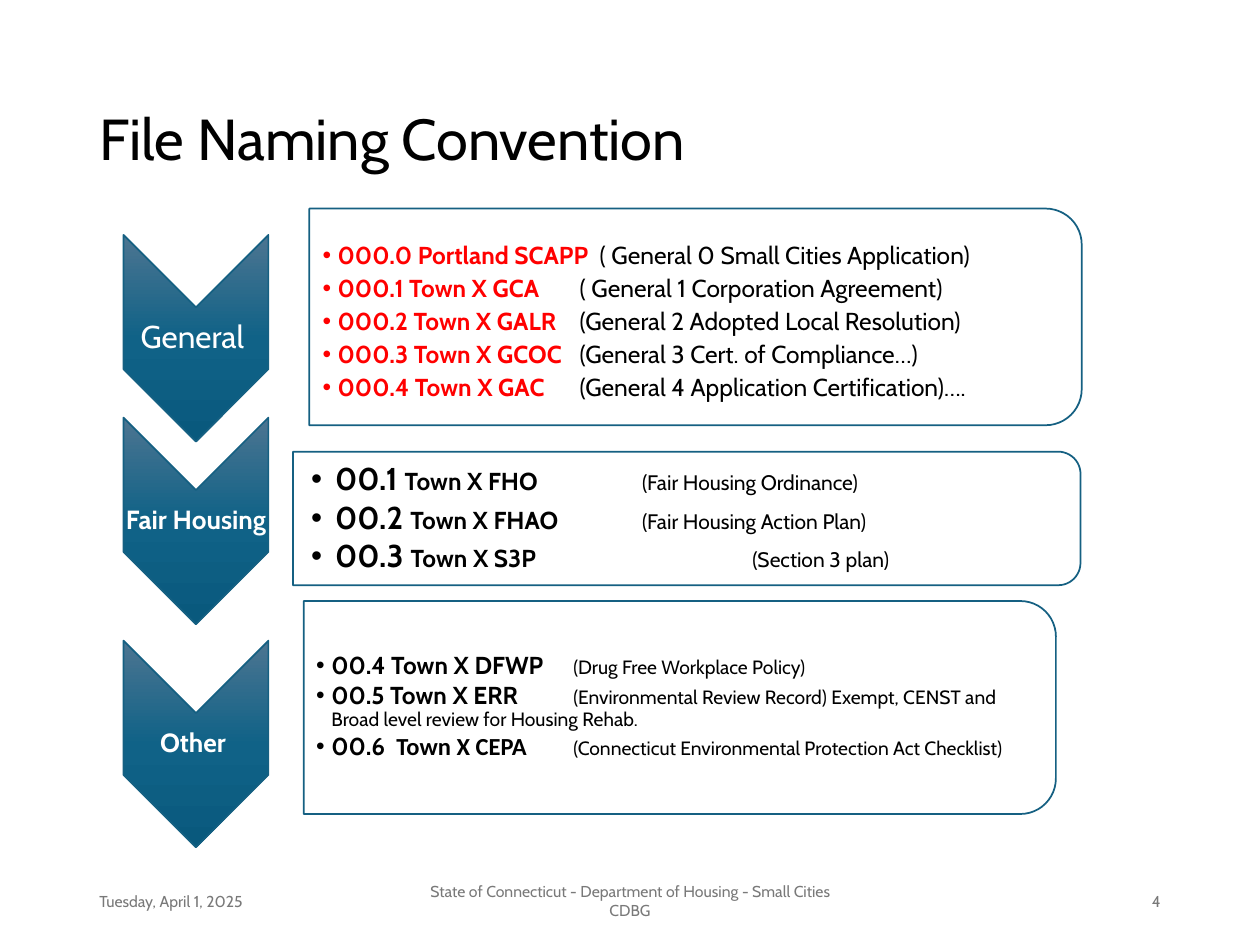
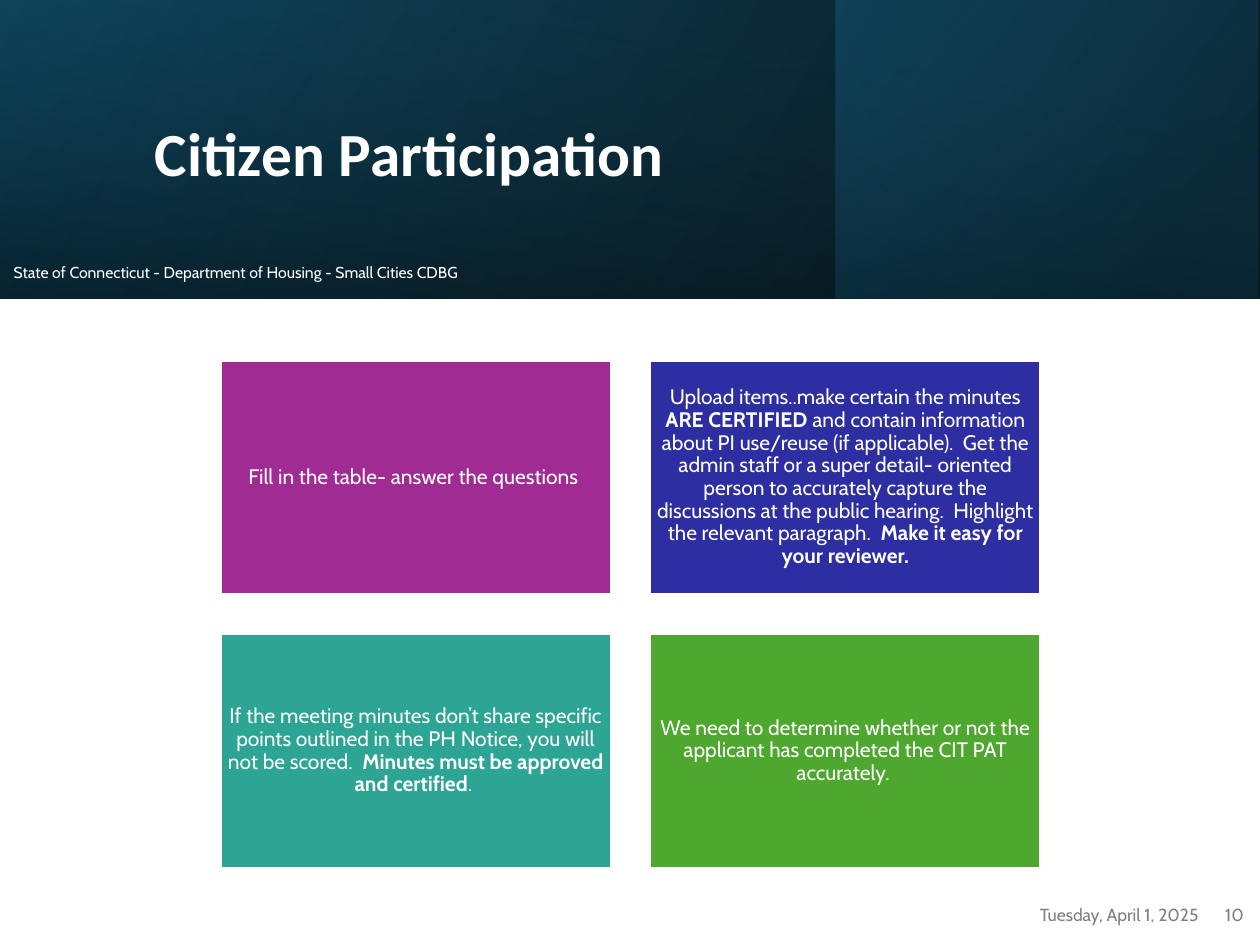
from lxml.etree import SubElement
from pptx import Presentation
from pptx.dml.color import RGBColor
from pptx.enum.shapes import MSO_SHAPE
from pptx.enum.text import MSO_ANCHOR, PP_ALIGN
from pptx.oxml import parse_xml
from pptx.oxml.ns import nsdecls, qn
from pptx.util import Inches, Pt

COLUMNS, ROWS = 100, 75
CELL = 0.1
BODY_FONT, HEADING_FONT = "Cabin", "Calibri"
BLACK, WHITE, RED = "000000", "FFFFFF", "FF0000"
TEAL, NAVY, DEEP_TEAL = "156082", "104862", "0B3041"
FOOTER_GRAY, DATE_GRAY = "797979", "808080"
CHEVRON_STOPS = [(0, "4C7591", 100), (50, "106287", 100), (100, "09597D", 100)]
DATE = "Tuesday, April 1, 2025"
AGENCY = "State of Connecticut - Department of Housing - Small Cities CDBG"
MARGINS = ("margin_left", "margin_top", "margin_right", "margin_bottom")
FRAME_INSETS = (1, 0.5, 1, 0.5)
LABEL_INSETS = (0.1,) * 4
TILE_INSETS = (0.5,) * 4
TIGHT = {"line_spacing": 0.9}
CENTERED = {"alignment": PP_ALIGN.CENTER, "line_spacing": 0.9}


def cells(count):
    return Inches(count * CELL)


def color(hex_value):
    return RGBColor.from_string(hex_value)


def apply_format(target, values):
    for name, value in values.items():
        setattr(target, name, value)


def run_style(size, tint=BLACK, bold=False, font=BODY_FONT):
    return {"size": Pt(size), "bold": bold, "name": font}, tint


def write_paragraph(paragraph, runs, paragraph_format):
    apply_format(paragraph, paragraph_format)
    for words, (font_format, tint) in runs:
        run = paragraph.add_run()
        run.text = words
        apply_format(run.font, font_format)
        run.font.color.rgb = color(tint)


def prepare_frame(frame, insets):
    margins = dict(zip(MARGINS, map(cells, insets)))
    apply_format(frame, {"word_wrap": True,
                         "vertical_anchor": MSO_ANCHOR.MIDDLE, **margins})
    return frame


def add_text(slide, box, paragraphs, paragraph_format, insets=FRAME_INSETS):
    holder = slide.shapes.add_textbox(*map(cells, box))
    frame = prepare_frame(holder.text_frame, insets)
    for index, runs in enumerate(paragraphs):
        paragraph = frame.add_paragraph() if index else frame.paragraphs[0]
        write_paragraph(paragraph, runs, paragraph_format)
    return frame


def add_line_of_text(slide, box, words, style, paragraph_format,
                     insets=FRAME_INSETS):
    add_text(slide, box, [[(words, style)]], paragraph_format, insets)


def add_block(slide, preset, box, fill=None, line=None, width=1, turn=0):
    left, top, across, down = box
    if turn:
        left, top = left + (across - down) / 2, top + (down - across) / 2
        across, down = down, across
    block = slide.shapes.add_shape(
        preset, *map(cells, (left, top, across, down)))
    block.shadow.inherit = False
    block.rotation = turn
    if fill:
        block.fill.solid()
        block.fill.fore_color.rgb = color(fill)
    if line:
        block.line.color.rgb = color(line)
        block.line.width = Pt(width)
    else:
        block.line.fill.background()
    return block


def fill_gradient(block, stops, angle):
    marks = "".join(
        f'<a:gs pos="{position * 1000}"><a:srgbClr val="{tint}">'
        f'<a:alpha val="{opacity * 1000}"/></a:srgbClr></a:gs>'
        for position, tint, opacity in stops)
    gradient = parse_xml(
        f'<a:gradFill {nsdecls("a")} rotWithShape="1"><a:gsLst>{marks}</a:gsLst>'
        f'<a:lin ang="{angle * 60000}" scaled="0"/></a:gradFill>')
    block._element.spPr.find(qn("a:prstGeom")).addnext(gradient)


def add_category(slide, top, words, size, bold):
    box = (9.8, top, 11.5, 16.4)
    chevron = add_block(slide, MSO_SHAPE.CHEVRON, box, line=TEAL, turn=90)
    fill_gradient(chevron, CHEVRON_STOPS, 0)
    add_line_of_text(slide, box, words, run_style(size, WHITE, bold),
                     CENTERED, LABEL_INSETS)


def add_bullets(frame, indent, tab_width):
    for paragraph in frame.paragraphs:
        properties = paragraph._p.get_or_add_pPr()
        attributes = {"marL": cells(indent), "indent": -cells(indent),
                      "defTabSz": cells(tab_width)}
        for name, value in attributes.items():
            properties.set(name, str(value))
        SubElement(properties, qn("a:buFont")).set("typeface", "Arial")
        SubElement(properties, qn("a:buChar")).set("char", "•")


def add_file_list(slide, panel, text_box, files, spacing, left_inset, indent,
                  tab_width):
    add_block(slide, MSO_SHAPE.ROUND_2_SAME_RECTANGLE, panel, WHITE, TEAL,
              turn=90)
    frame = add_text(slide, text_box, files, spacing,
                     (left_inset, 0.1, 0.1, 0.1))
    add_bullets(frame, indent, tab_width)


def add_band(slide, box, stops, angle, turn=0):
    band = add_block(slide, MSO_SHAPE.RECTANGLE, box, turn=turn)
    fill_gradient(band, stops, angle)
    band._element.spPr.find(qn("a:xfrm")).set("flipH", "1")


def add_tile(slide, box, fill, runs):
    tile = add_block(slide, MSO_SHAPE.RECTANGLE, box, fill, WHITE, 1.5)
    frame = prepare_frame(tile.text_frame, TILE_INSETS)
    styled = [(words, run_style(12, WHITE, bold)) for words, bold in runs]
    write_paragraph(frame.paragraphs[0], styled, CENTERED)


def build_file_naming(slide):
    add_line_of_text(slide, (6.9, 4, 86.2, 14.5), "File Naming Convention",
                     run_style(33), TIGHT)
    for category in ((18.65, "General ", 18, False),
                     (33.15, "Fair Housing", 15, True),
                     (50.85, "Other ", 15, True)):
        add_category(slide, *category)

    general = [
        ("000.0 Portland SCAPP  ", "( General 0 Small Cities Application)"),
        ("000.1 Town X GCA  \t", "( General 1 Corporation Agreement)"),
        ("000.2 Town X GALR \t", "(General 2 Adopted Local Resolution)"),
        ("000.3 Town X GCOC \t", "(General 3 Cert. of Compliance…)"),
        ("000.4 Town X GAC \t", "(General 4 Application Certification)…."),
    ]
    fair_housing = [
        ("00.1 ", "Town X FHO ", "\t", "(Fair Housing Ordinance)"),
        ("00.2 ", "Town X FHAO ", "\t", "(Fair Housing Action Plan)"),
        ("00.3 ", "Town X S3P ", "\t\t", "(Section 3 plan)"),
    ]
    other = [
        ("00.4 ", "Town X DFWP \t", BODY_FONT, "(Drug Free Workplace Policy)"),
        ("00.5 ", "Town X ERR \t", BODY_FONT,
         "(Environmental Review Record) Exempt, CENST and "
         "\t\t\tBroad level review for Housing Rehab. "),
        ("00.6  ", "Town X CEPA \t", HEADING_FONT,
         "(Connecticut Environmental Protection Act Checklist)"),
    ]
    add_file_list(
        slide, (24.55, 16.55, 61.3, 17.2), (24.5, 17.7, 60.5, 15.5),
        [[(code, run_style(14, RED, True)), (meaning, run_style(14))]
         for code, meaning in general],
        {"space_before": Pt(2)}, 1.1, 1.2, 6.8)
    add_file_list(
        slide, (23.25, 35.85, 62.5, 10.6), (23.3, 36.4, 62, 9.6),
        [[(number, run_style(18, bold=True)), (code, run_style(14, bold=True)),
          (gap, run_style(18)), (meaning, run_style(12))]
         for number, code, gap, meaning in fair_housing],
        {**TIGHT, "space_after": Pt(2.5)}, 1.4, 1.9, 8.75)
    add_file_list(
        slide, (24.1, 47.7, 59.7, 16.9), (24, 48.5, 58.9, 15.2),
        [[(number, run_style(14, bold=True)),
          (code, run_style(14, bold=True, font=font)),
          (meaning, run_style(11))]
         for number, code, font, meaning in other],
        {**TIGHT, "space_after": Pt(2)}, 1.1, 1.2, 6.8)

    for left, width, words, alignment in (
            (6.9, 22.5, DATE, PP_ALIGN.LEFT),
            (33.1, 33.8, AGENCY, PP_ALIGN.CENTER),
            (70.6, 22.5, "4", PP_ALIGN.RIGHT)):
        add_line_of_text(slide, (left, 69.5, width, 4), words,
                         run_style(9, FOOTER_GRAY), {"alignment": alignment})


def build_citizen_participation(slide):
    banner = (0, 0, COLUMNS, 23.7)
    add_band(slide, banner, [(0, BLACK, 96), (100, NAVY, 100)], 330)
    add_band(slide, (66.3, 0, 33.6, 23.7),
             [(19, DEEP_TEAL, 68), (100, TEAL, 48)], 320)
    add_band(slide, banner, [(23, NAVY, 16), (99, BLACK, 45)], 350, turn=270)
    add_line_of_text(slide, (11.3, 3.8, 79.7, 17.2), "Citizen Participation",
                     run_style(35, WHITE, True, HEADING_FONT), TIGHT)
    add_line_of_text(slide, (0.1, 19.7, 42.4, 4), AGENCY,
                     run_style(9, WHITE), TIGHT)
    for left, width, words in ((73.6, 22.5, DATE), (96, 3.7, "10")):
        add_line_of_text(slide, (left, 70.6, width, 4), words,
                         run_style(10, DATE_GRAY),
                         {"alignment": PP_ALIGN.RIGHT})

    tiles = [
        ("A02B93", [("Fill in the table- answer the questions ", False)]),
        ("2C2EA2", [
            ("Upload items..make certain the minutes ", False),
            ("ARE CERTIFIED ", True),
            ("and contain information about PI use/reuse (if applicable).  "
             "Get the admin staff or a super detail- oriented person to "
             "accurately capture the discussions at the public hearing.  "
             "Highlight the relevant paragraph.  ", False),
            ("Make it easy for your reviewer.", True)]),
        ("2DA594", [
            ("If the meeting minutes don’t share specific points outlined in "
             "the PH Notice, you will not be scored.  ", False),
            ("Minutes must be approved and certified", True),
            (". ", False)]),
        ("4EA72E", [
            ("We need to determine whether or not the applicant has completed "
             "the CIT PAT accurately. ", False)]),
    ]
    width, height, gap = 31, 18.6, 3.1
    for index, (fill, runs) in enumerate(tiles):
        row, column = divmod(index, 2)
        box = (17.5 + column * (width + gap), 28.6 + row * (height + gap),
               width, height)
        add_tile(slide, box, fill, runs)


def main():
    deck = Presentation()
    apply_format(deck, {"slide_width": cells(COLUMNS),
                        "slide_height": cells(ROWS)})
    for build in (build_file_naming, build_citizen_participation):
        build(deck.slides.add_slide(deck.slide_layouts[6]))
    deck.save("out.pptx")


if __name__ == "__main__":
    main()
